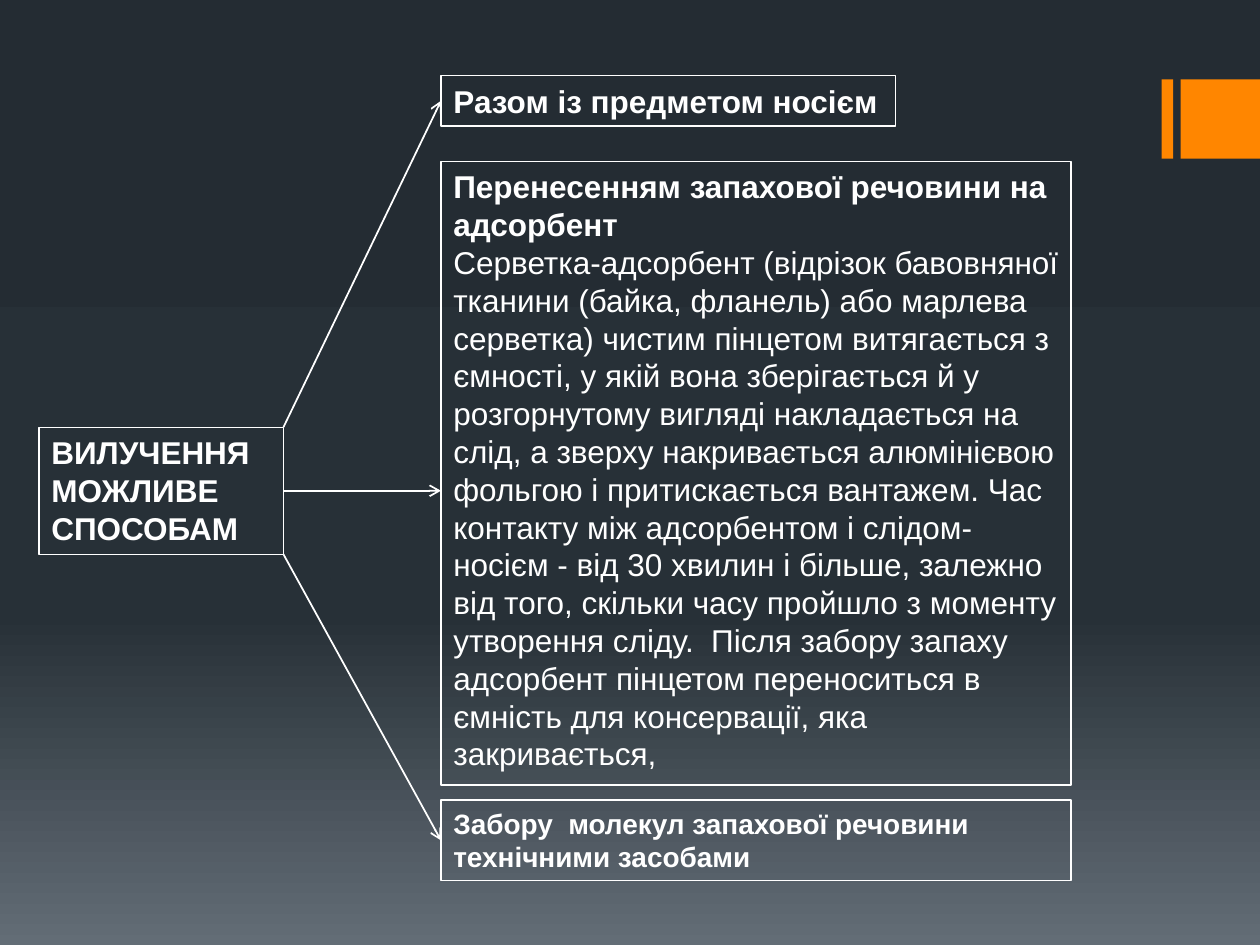
from copy import deepcopy

from lxml import etree
from pptx import Presentation
from pptx import util as u
from pptx.dml.color import RGBColor
from pptx.enum import shapes, text
from pptx.oxml.ns import qn

WIDTH, HEIGHT = 10, 7.5
COLORS = {"dark": "242C33", "slate": "273037", "mist": "636D76",
          "accent": "FF8600", "ink": "FFFFFF"}
METHOD_LEFT, METHOD_WIDTH = 3.5, 5
METHODS = [
    ((METHOD_LEFT, 0.6, 3.61, 0.4), 18, False, ["Разом із предметом носієм"]),
    ((METHOD_LEFT, 1.28, METHOD_WIDTH, 4.95), 18, True, [
        "Перенесенням запахової речовини на адсорбент",
        "Серветка-адсорбент (відрізок бавовняної тканини (байка, фланель) або марлева "
        "серветка) чистим пінцетом витягається з ємності, у якій вона зберігається й у "
        "розгорнутому вигляді накладається на слід, а зверху накривається алюмінієвою "
        "фольгою і притискається вантажем. Час контакту між адсорбентом і слідом-носієм "
        "- від 30 хвилин і більше, залежно від того, скільки часу пройшло з моменту "
        "утворення сліду.  Після забору запаху адсорбент пінцетом переноситься в ємність "
        "для консервації, яка закривається,"]),
    ((METHOD_LEFT, 6.35, METHOD_WIDTH, 0.64), 16, True,
     ["Забору  молекул запахової речовини технічними засобами"]),
]


def color(name):
    """Return the named palette colour."""
    return RGBColor.from_string(COLORS[name])


def paint_background(slide):
    """Fill the slide with a vertical three-stop gradient."""
    fill = slide.background.fill
    fill.gradient()
    fill.gradient_angle = 270
    stops = fill.gradient_stops
    first = slide.background._cSld.find(".//" + qn("a:gs"))
    first.addnext(deepcopy(first))
    stops = fill.gradient_stops
    for stop, name, position in zip(stops, ("dark", "slate", "mist"), (0, 0.65, 1)):
        stop.color.rgb = color(name)
        stop.position = position


def add_corner_bars(slide, box):
    """Draw a thin bar and a square at the two ends of the box."""
    left, top, width, height = box
    for bar_left, bar_width in ((left, 0.09), (left + width - height, height)):
        bar = slide.shapes.add_shape(
            shapes.MSO_SHAPE.RECTANGLE,
            *map(u.Inches, (bar_left, top, bar_width, height)))
        bar.shadow.inherit = False
        bar.fill.solid()
        bar.fill.fore_color.rgb = color("accent")
        bar.line.fill.background()


def add_framed_text(slide, box, size, wrap, paragraphs):
    """Place outlined text whose first paragraph is bold."""
    frame = slide.shapes.add_textbox(*map(u.Inches, box))
    frame.line.color.rgb = color("ink")
    frame.line.width = u.Pt(0.75)
    body = frame.text_frame
    body.word_wrap = wrap
    body.auto_size = text.MSO_AUTO_SIZE.SHAPE_TO_FIT_TEXT
    body.text = "\n".join(paragraphs)
    for index, paragraph in enumerate(body.paragraphs):
        font = paragraph.runs[0].font
        style = {"name": "Arial", "size": u.Pt(size), "bold": index == 0}
        for key, value in style.items():
            setattr(font, key, value)
        font.color.rgb = color("ink")
    return frame


def add_arrow(slide, start, end):
    """Draw a straight arrow between two points."""
    arrow = slide.shapes.add_connector(shapes.MSO_CONNECTOR.STRAIGHT, *start, *end)
    arrow.line.color.rgb = color("ink")
    arrow.line.width = u.Pt(1)
    etree.SubElement(arrow.line._get_or_add_ln(), qn("a:tailEnd"), type="arrow")
    etree.SubElement(arrow._element.spPr, qn("a:effectLst"))
    return arrow


def add_method_tree(slide, root_box):
    """Link the root topic to each extraction method."""
    top, middle, bottom = [
        add_framed_text(slide, *method) for method in METHODS]
    root = add_framed_text(slide, root_box, 18, True, ["ВИЛУЧЕННЯ МОЖЛИВЕ СПОСОБАМ"])
    right = root.left + root.width
    center = root.top + root.height // 2
    for method, start_y in ((top, root.top), (bottom, root.top + root.height)):
        end = method.left, method.top + method.height // 2
        add_arrow(slide, (right, start_y), end).end_connect(method, 1)
    add_arrow(slide, (right, center), (middle.left, center)).begin_connect(root, 3)


def main():
    """Build and save the slide."""
    deck = Presentation()
    deck.slide_width, deck.slide_height = u.Inches(WIDTH), u.Inches(HEIGHT)
    slide = deck.slides.add_slide(deck.slide_layouts[6])
    paint_background(slide)
    add_corner_bars(slide, (9.22, 0.63, WIDTH - 9.22, 0.63))
    add_method_tree(slide, (0.31, 3.39, 1.94, 1.01))
    deck.save("out.pptx")


if __name__ == "__main__":
    main()
